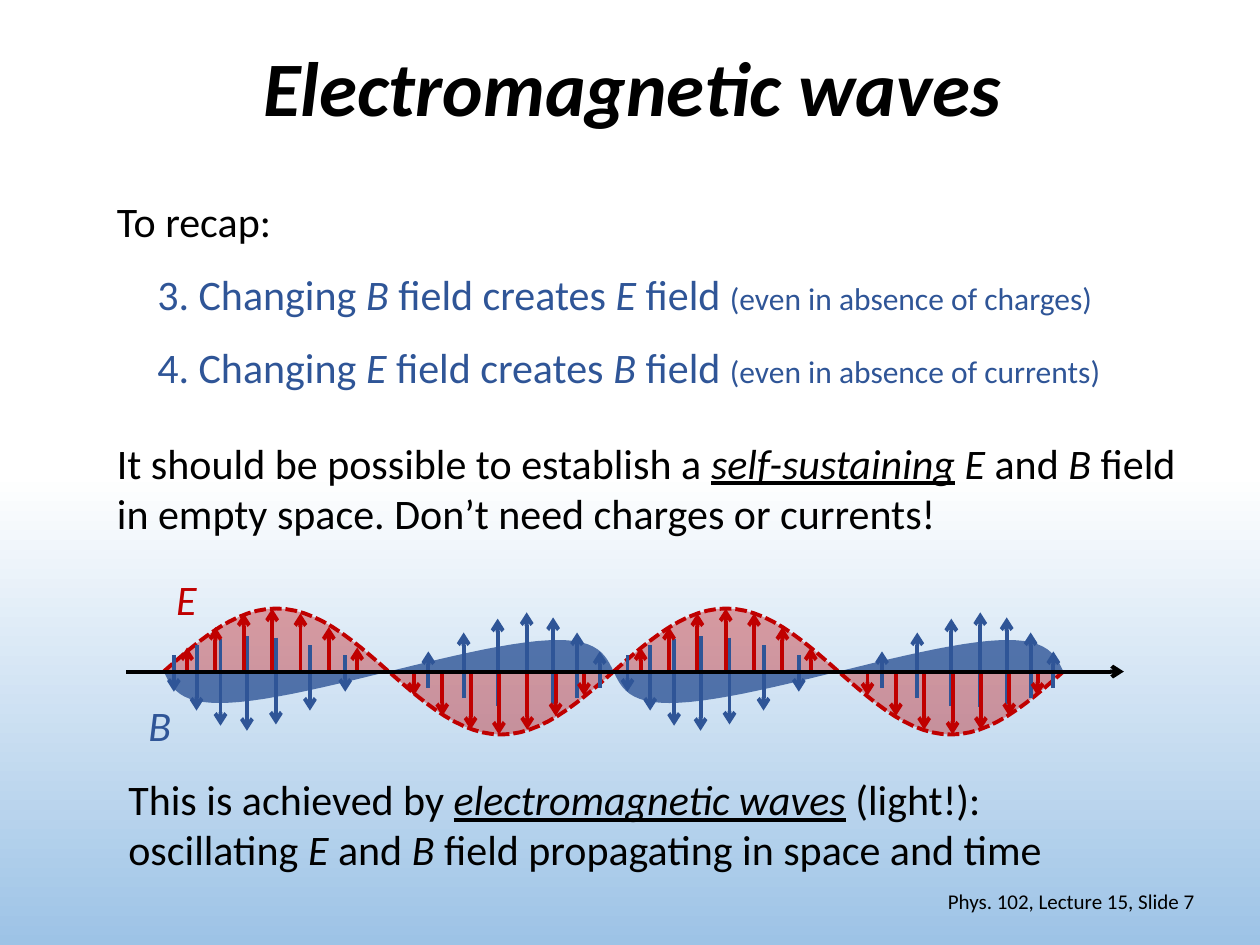
from dataclasses import dataclass
from math import pi, sin

from lxml.etree import SubElement
from pptx import Presentation
from pptx.dml.color import RGBColor
from pptx.enum.dml import MSO_LINE
from pptx.enum.shapes import MSO_CONNECTOR
from pptx.enum.text import MSO_ANCHOR, PP_ALIGN
from pptx.oxml.ns import qn
from pptx.shapes.group import GroupShape
from pptx.slide import Slide
from pptx.util import Inches, Pt

BLACK = RGBColor(0x00, 0x00, 0x00)
WHITE = RGBColor(0xFF, 0xFF, 0xFF)
SKY = RGBColor(0x9D, 0xC3, 0xE6)
BLUE = RGBColor(0x2F, 0x55, 0x97)
RED = RGBColor(0xC0, 0x00, 0x00)
FONT = "Calibri"

AXIS_Y = 5.33
WAVE_START = 1.3
WAVELENGTH = 3.57
WAVE_STEPS = 48
ARROW_PERIOD = 3.6
ELECTRIC_HEIGHT = 0.5
ELECTRIC_STEP = 0.225
MAGNETIC_MIRROR_X = 6.14


@dataclass(frozen=True)
class Span:
    text: str
    italic: bool = False
    underline: bool = False
    size: int = 24


@dataclass(frozen=True)
class TextBlock:
    left: float
    top: float
    width: float
    height: float
    lines: list[list[Span]]
    color: RGBColor = BLACK
    wrap: bool = True
    align: PP_ALIGN = PP_ALIGN.LEFT
    anchor: MSO_ANCHOR = MSO_ANCHOR.TOP


@dataclass(frozen=True)
class Wave:
    height: float
    shear: float
    color: RGBColor
    opacity: int
    outlined: bool


@dataclass(frozen=True)
class FieldArrow:
    x: float
    start_y: float
    end_y: float


ELECTRIC_WAVE = Wave(ELECTRIC_HEIGHT, 0, RED, 35, True)
MAGNETIC_WAVE = Wave(-0.25, -0.45, BLUE, 80, False)

MAGNETIC_ARROWS = [
    FieldArrow(1.38, 5.2, 5.49),
    FieldArrow(1.56, 5.12, 5.64),
    FieldArrow(1.75, 5.07, 5.76),
    FieldArrow(1.96, 5.05, 5.8),
    FieldArrow(2.19, 5.06, 5.75),
    FieldArrow(2.46, 5.12, 5.64),
    FieldArrow(2.74, 5.2, 5.49),
]

E = Span("E", italic=True)
B = Span("B", italic=True)


def law(number: int, cause: Span, effect: Span, absent: str) -> list[Span]:
    return [Span(f"{number}. Changing "), cause, Span(" field creates "), effect,
            Span(" field "), Span(f"(even in absence of {absent})", size=18)]


TEXT_BLOCKS = [
    TextBlock(0.83, 1.5, 1.44, 0.5, [[Span("To recap:")]], wrap=False),
    TextBlock(1.15, 2.08, 7.7, 0.5, [law(3, B, E, "charges")], BLUE, wrap=False),
    TextBlock(1.15, 2.66, 7.77, 0.5, [law(4, E, B, "currents")], BLUE, wrap=False),
    TextBlock(0.83, 3.42, 8.67, 0.91, [[
        Span("It should be possible to establish a "),
        Span("self-sustaining", italic=True, underline=True),
        Span(" "), E, Span(" and "), B,
        Span(" field in empty space. Don’t need charges or currents!")]]),
    TextBlock(0.92, 6.09, 7.75, 0.91, [
        [Span("This is achieved by "),
         Span("electromagnetic waves", italic=True, underline=True),
         Span(" (light!):")],
        [Span("oscillating "), Span("E ", italic=True), Span("and "), B,
         Span(" field propagating in space and time")]]),
    TextBlock(7.06, 6.95, 2.52, 0.4,
              [[Span("Phys. 102, Lecture 15, Slide 7", size=12)]],
              align=PP_ALIGN.RIGHT, anchor=MSO_ANCHOR.MIDDLE),
]

FIELD_LABELS = [
    TextBlock(1.3, 4.5, 0.37, 0.5, [[E]], RED, wrap=False),
    TextBlock(1.08, 5.5, 0.38, 0.5, [[B]], BLUE, wrap=False),
]


def add_text(parent: Slide | GroupShape, block: TextBlock) -> None:
    box = parent.shapes.add_textbox(Inches(block.left), Inches(block.top),
                                    Inches(block.width), Inches(block.height))
    frame = box.text_frame
    frame.word_wrap = block.wrap
    frame.vertical_anchor = block.anchor
    frame.text = "\n".join("".join(span.text for span in line) for line in block.lines)
    for para, line in zip(frame.paragraphs, block.lines):
        para.text = ""
        para.alignment = block.align
        for span in line:
            run = para.add_run()
            run.text = span.text
            run.font.name = FONT
            run.font.size = Pt(span.size)
            run.font.italic = span.italic
            run.font.underline = span.underline
            run.font.color.rgb = block.color


def add_arrow(group: GroupShape, start: tuple[float, float],
              end: tuple[float, float], color: RGBColor) -> None:
    arrow = group.shapes.add_connector(
        MSO_CONNECTOR.STRAIGHT, *(Inches(value) for value in (*start, *end)))
    arrow.line.color.rgb = color
    arrow.line.width = Pt(2.25)
    properties = arrow._element.spPr
    SubElement(properties.find(qn("a:ln")), qn("a:tailEnd"), type="arrow")
    SubElement(properties, qn("a:effectLst"))


def add_wave(group: GroupShape, wave: Wave, start_x: float) -> None:
    points = []
    for step in range(WAVE_STEPS + 1):
        phase = step / WAVE_STEPS
        swing = sin(2 * pi * phase)
        points.append((Inches(start_x + WAVELENGTH * phase + wave.shear * swing),
                       Inches(AXIS_Y - wave.height * swing)))
    builder = group.shapes.build_freeform(*points[0])
    builder.add_line_segments(points[1:], close=False)
    shape = builder.convert_to_shape()
    shape.shadow.inherit = False
    shape.fill.solid()
    shape.fill.fore_color.rgb = wave.color
    color = shape._element.spPr.find(qn("a:solidFill"))[0]
    SubElement(color, qn("a:alpha"), val=str(wave.opacity * 1000))
    if wave.outlined:
        shape.line.color.rgb = wave.color
        shape.line.width = Pt(2.25)
        shape.line.dash_style = MSO_LINE.SQUARE_DOT
    else:
        shape.line.fill.background()


def add_field_arrows(group: GroupShape, shift: float) -> None:
    for arrow in MAGNETIC_ARROWS:
        add_arrow(group, (arrow.x + shift, arrow.start_y),
                  (arrow.x + shift, arrow.end_y), BLUE)
        mirrored_x = MAGNETIC_MIRROR_X - arrow.x + shift
        add_arrow(group, (mirrored_x, 2 * AXIS_Y - arrow.start_y),
                  (mirrored_x, 2 * AXIS_Y - arrow.end_y), BLUE)
    for step in range(1, 16):
        if step != 8:
            x = 1.26 + ELECTRIC_STEP * step + shift
            tip = AXIS_Y - ELECTRIC_HEIGHT * sin(step * pi / 8)
            add_arrow(group, (x, AXIS_Y), (x, tip), RED)


def add_title(slide: Slide) -> None:
    title = slide.shapes.title
    title.left, title.top = Inches(0.71), Inches(0)
    title.width, title.height = Inches(8.62), Inches(1.45)
    title.text_frame.text = "Electromagnetic waves"
    title.text_frame.vertical_anchor = MSO_ANCHOR.MIDDLE
    para = title.text_frame.paragraphs[0]
    para.alignment = PP_ALIGN.CENTER
    para.line_spacing = 0.9
    font = para.runs[0].font
    font.name, font.size = FONT, Pt(44)
    font.bold = font.italic = True
    font.color.rgb = BLACK


def main() -> None:
    deck = Presentation()
    deck.slide_width, deck.slide_height = Inches(10), Inches(7.5)
    slide = deck.slides.add_slide(deck.slide_layouts[5])
    fill = slide.background.fill
    fill.gradient()
    fill.gradient_angle = 270
    for stop, position, color in zip(fill.gradient_stops, (0.5, 1), (WHITE, SKY)):
        stop.position = position
        stop.color.rgb = color

    add_title(slide)
    for block in TEXT_BLOCKS:
        add_text(slide, block)

    group = slide.shapes.add_group_shape()
    for cycle in range(2):
        start_x = WAVE_START + cycle * WAVELENGTH
        add_wave(group, ELECTRIC_WAVE, start_x)
        add_wave(group, MAGNETIC_WAVE, start_x)
        add_field_arrows(group, cycle * ARROW_PERIOD)
    add_arrow(group, (1, AXIS_Y), (8.92, AXIS_Y), BLACK)
    for label in FIELD_LABELS:
        add_text(group, label)
    deck.save("out.pptx")


if __name__ == "__main__":
    main()
